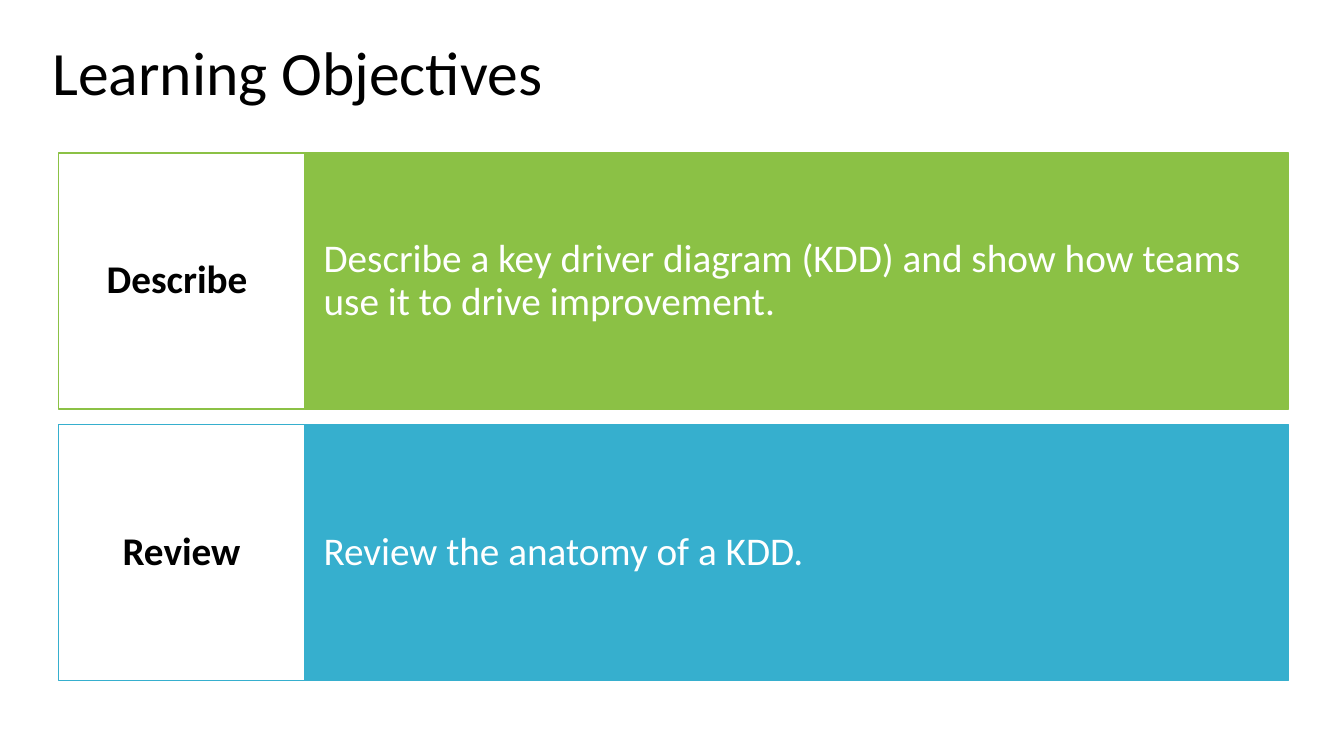
from pptx import Presentation
from pptx.dml.color import RGBColor
from pptx.enum.shapes import MSO_SHAPE
from pptx.enum.text import MSO_ANCHOR, PP_ALIGN
from pptx.util import Inches, Pt

RECT = MSO_SHAPE.RECTANGLE
MIDDLE = MSO_ANCHOR.MIDDLE
LEFT, CENTER = PP_ALIGN.LEFT, PP_ALIGN.CENTER

OBJECTIVES = [
    ("Describe ", "Describe a key driver diagram (KDD) and show how teams "
     "use it to drive improvement.", "8BC145"),
    ("Review", "Review the anatomy of a KDD.", "36AFCE"),
]
ROW_LEFT, ROW_TOP, ROW_HEIGHT, ROW_STEP = 0.58, 1.52, 2.54, 2.69
LABEL_WIDTH, DETAIL_WIDTH = 2.44, 9.76


def rgb(color):
    return RGBColor.from_string(color)


def write(sp, text, size=28, color="000000", bold=False, align=LEFT,
          after=10, inset=(0.1, 0.05)):
    """Fill a shape with one paragraph; inset is (horizontal, vertical)."""
    tf = sp.text_frame
    tf.word_wrap = True
    tf.vertical_anchor = MIDDLE
    tf.margin_left = tf.margin_right = Inches(inset[0])
    tf.margin_top = tf.margin_bottom = Inches(inset[1])
    p = tf.paragraphs[0]
    p.alignment = align
    p.line_spacing = 0.9
    p.space_after = Pt(after)
    r = p.add_run()
    r.text = text
    r.font.name = "Calibri"
    r.font.size = Pt(size)
    r.font.bold = bold
    r.font.color.rgb = rgb(color)


class Deck:
    def __init__(self):
        self.prs = Presentation()
        self.prs.slide_width = Inches(13.33)
        self.prs.slide_height = Inches(7.5)
        self.s = self.prs.slides.add_slide(self.prs.slide_layouts[6])

    def text(self, box, text, **fmt):
        write(self.s.shapes.add_textbox(*map(Inches, box)), text, **fmt)

    def rect(self, box, fill, line, text, **fmt):
        sp = self.s.shapes.add_shape(RECT, *map(Inches, box))
        sp.shadow.inherit = False
        sp.fill.solid()
        sp.fill.fore_color.rgb = rgb(fill)
        sp.line.color.rgb = rgb(line)
        sp.line.width = Pt(1)
        write(sp, text, **fmt)

    def objective(self, top, label, detail, color):
        self.rect((ROW_LEFT + LABEL_WIDTH, top, DETAIL_WIDTH, ROW_HEIGHT),
                  color, color, detail, color="FFFFFF", inset=(0.19, 0.65))
        self.rect((ROW_LEFT, top, LABEL_WIDTH, ROW_HEIGHT),
                  "FFFFFF", color, label, bold=True, align=CENTER,
                  inset=(0.13, 0.25))


def main():
    deck = Deck()
    deck.text((0.42, 0.02, 8.62, 1.45), "Learning Objectives", size=44, after=6)
    for i, (label, detail, color) in enumerate(OBJECTIVES):
        deck.objective(ROW_TOP + i * ROW_STEP, label, detail, color)
    deck.prs.save("out.pptx")


if __name__ == "__main__":
    main()
